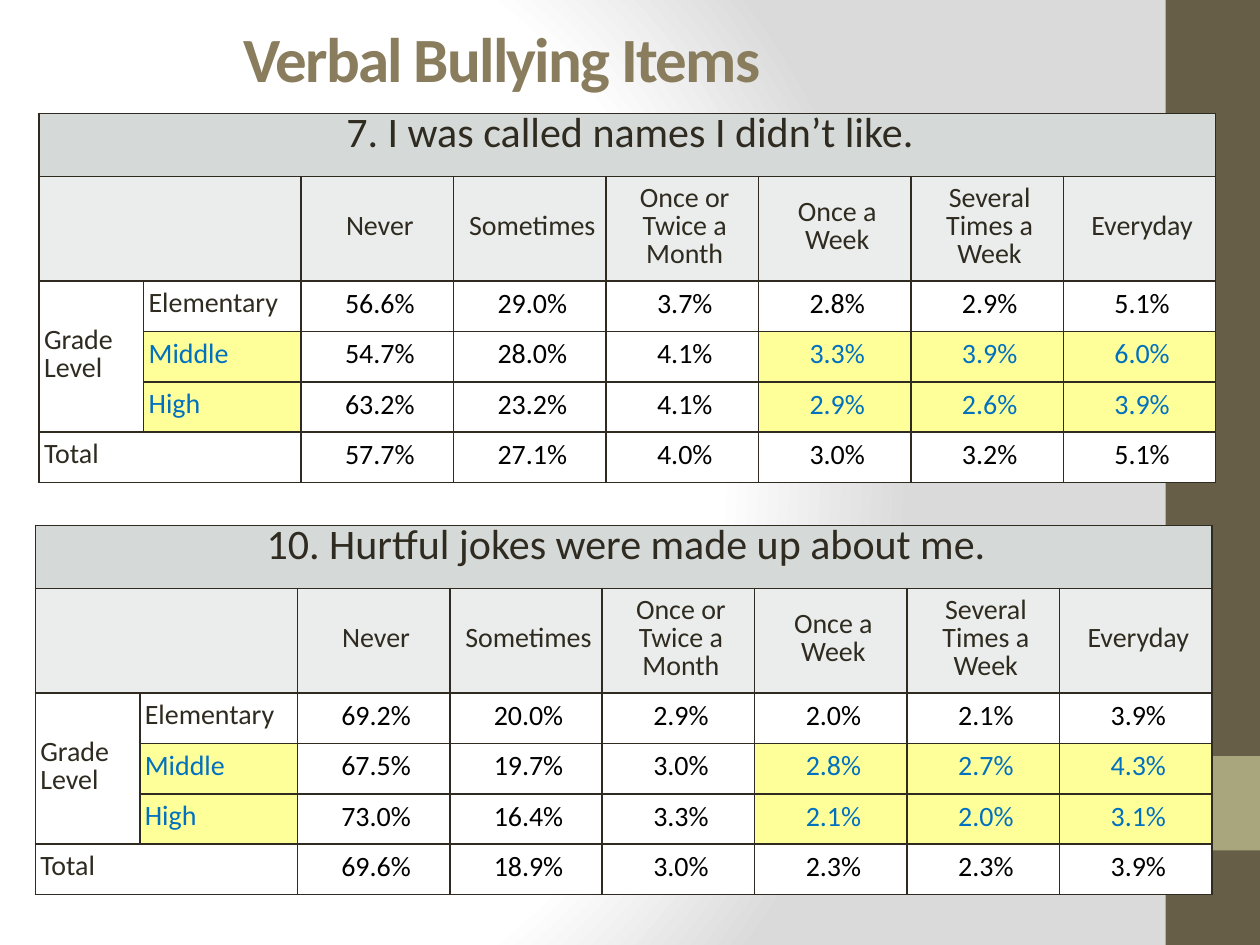
from pptx import Presentation
from pptx.dml.color import RGBColor
from pptx.enum.shapes import MSO_SHAPE as Shape
from pptx.enum.text import MSO_ANCHOR as Anchor, PP_ALIGN as Align
from pptx.oxml import parse_xml
from pptx.oxml.ns import nsdecls, qn
from pptx.util import Inches, Pt

INK, BLUE, BLACK = "2F2B20", "0070C0", "000000"
WHITE, YELLOW, BAND, HEAD = "FFFFFF", "FFFF99", "D5DAD8", "EAEDEB"
COLS = [0.83, 1.25] + [1.21] * 6
ROWS = [0.5, 0.83] + [0.4] * 4
LEVELS = ["Elementary", "Middle", "High", "Total"]
CHOICES = ["Never", "Sometimes", "Once or Twice a Month", "Once a Week",
           "Several Times a Week", "Everyday"]

NAMES = [
    "56.6% 29.0% 3.7% 2.8% 2.9% 5.1%",
    "54.7% 28.0% 4.1% 3.3% 3.9% 6.0%",
    "63.2% 23.2% 4.1% 2.9% 2.6% 3.9%",
    "57.7% 27.1% 4.0% 3.0% 3.2% 5.1%",
]
JOKES = [
    "69.2% 20.0% 2.9% 2.0% 2.1% 3.9%",
    "67.5% 19.7% 3.0% 2.8% 2.7% 4.3%",
    "73.0% 16.4% 3.3% 2.1% 2.0% 3.1%",
    "69.6% 18.9% 3.0% 2.3% 2.3% 3.9%",
]


def color(code):
    return RGBColor.from_string(code)


class Deck:
    font = "Calibri"

    def __init__(self, prs):
        self.slide = prs.slides.add_slide(prs.slide_layouts[5])

    def backdrop(self, stops):
        """Circular gradient centred on the left part of the slide."""
        self.slide.background.fill.solid()
        solid = self.slide.element.find(".//" + qn("p:bgPr"))[0]
        marks = "".join(f'<a:gs pos="{pos * 1000}"><a:srgbClr val="{code}"/></a:gs>'
                        for pos, code in stops)
        grad = parse_xml(
            f'<a:gradFill {nsdecls("a")} rotWithShape="1"><a:gsLst>{marks}</a:gsLst>'
            '<a:path path="circle"><a:fillToRect l="20000" t="50000" '
            'r="100000" b="50000"/></a:path></a:gradFill>')
        solid.getparent().replace(solid, grad)

    def rect(self, left, top, width, height, fill):
        box = self.slide.shapes.add_shape(
            Shape.RECTANGLE, *map(Inches, (left, top, width, height)))
        box.shadow.inherit = False
        box.fill.solid()
        box.fill.fore_color.rgb = color(fill)
        box.line.fill.background()

    def style(self, para, size, code, align):
        para.alignment = align
        para.font.name = self.font
        para.font.size = Pt(size)
        para.font.color.rgb = color(code)

    def title(self, text, left, top, width, height):
        box = self.slide.shapes.title
        box.left, box.top, box.width, box.height = map(
            Inches, (left, top, width, height))
        frame = box.text_frame
        frame.text = text
        frame.vertical_anchor = Anchor.MIDDLE
        para = frame.paragraphs[0]
        self.style(para, 36, "897D5D", Align.LEFT)
        para.font.bold = True
        para.runs[0]._r.get_or_add_rPr().set("spc", "-100")

    def border(self, cell):
        props = cell._tc.get_or_add_tcPr()
        for spot, side in enumerate("LRTB"):
            props.insert(spot, parse_xml(
                f'<a:ln{side} {nsdecls("a")} w="{Pt(1)}"><a:solidFill>'
                f'<a:srgbClr val="{INK}"/></a:solidFill></a:ln{side}>'))

    def label(self, cell, text, code=INK, size=16, align=Align.CENTER):
        cell.text = text
        para = cell.text_frame.paragraphs[0]
        self.style(para, size, code, align)
        para.line_spacing = Pt(16)
        para._p.get_or_add_pPr().set("marL", str(Inches(0.04)))

    def table(self, left, top, item, data):
        frame = self.slide.shapes.add_table(
            len(ROWS), len(COLS), Inches(left), Inches(top),
            Inches(sum(COLS)), Inches(sum(ROWS)))
        grid = frame.table
        grid.first_row = grid.horz_banding = False
        for col, width in zip(grid.columns, COLS):
            col.width = Inches(width)
        for row, height in zip(grid.rows, ROWS):
            row.height = Inches(height)

        # Fills, borders and margins
        for r in range(len(ROWS)):
            for c in range(len(COLS)):
                cell = grid.cell(r, c)
                marked = r in (3, 4) and c in (1, 5, 6, 7)
                fill = YELLOW if marked else (BAND, HEAD)[r] if r < 2 else WHITE
                cell.fill.solid()
                cell.fill.fore_color.rgb = color(fill)
                self.border(cell)
                cell.vertical_anchor = Anchor.MIDDLE
                edge = Inches(0.01 if r > 1 and c > 1 else 0)
                cell.margin_left = cell.margin_right = cell.margin_top = edge
                cell.margin_bottom = 0

        # Merged cells
        for r, c, last, end in [(0, 0, 0, 7), (1, 0, 1, 1), (2, 0, 4, 0), (5, 0, 5, 1)]:
            grid.cell(r, c).merge(grid.cell(last, end))

        # Words and values
        self.label(grid.cell(0, 0), item, size=24)
        for c, choice in enumerate(CHOICES, 2):
            self.label(grid.cell(1, c), choice)
        self.label(grid.cell(2, 0), "Grade Level", align=Align.LEFT)
        for r, (level, line) in enumerate(zip(LEVELS, data), 2):
            marked = level in ("Middle", "High")
            self.label(grid.cell(r, 0 if level == "Total" else 1), level,
                       BLUE if marked else INK, align=Align.LEFT)
            for c, value in enumerate(line.split(), 2):
                self.label(grid.cell(r, c), value,
                           BLUE if marked and c > 4 else BLACK)


def main():
    prs = Presentation()
    prs.slide_width, prs.slide_height = Inches(10), Inches(7.5)
    deck = Deck(prs)

    # Background and side bar
    deck.backdrop([(0, WHITE), (75, WHITE), (100, "DADADA")])
    deck.rect(9.25, 0, 0.75, 7.5, "675E47")
    deck.rect(9.25, 6, 0.75, 0.75, "A9A57C")

    # Title and survey tables
    deck.title("Verbal Bullying Items", 1.83, 0.08, 7.59, 0.75)
    deck.table(0.31, 0.9, "7. I was called names I didn’t like.", NAMES)
    deck.table(0.28, 4.17, "10. Hurtful jokes were made up about me.", JOKES)
    prs.save("out.pptx")


if __name__ == "__main__":
    main()
